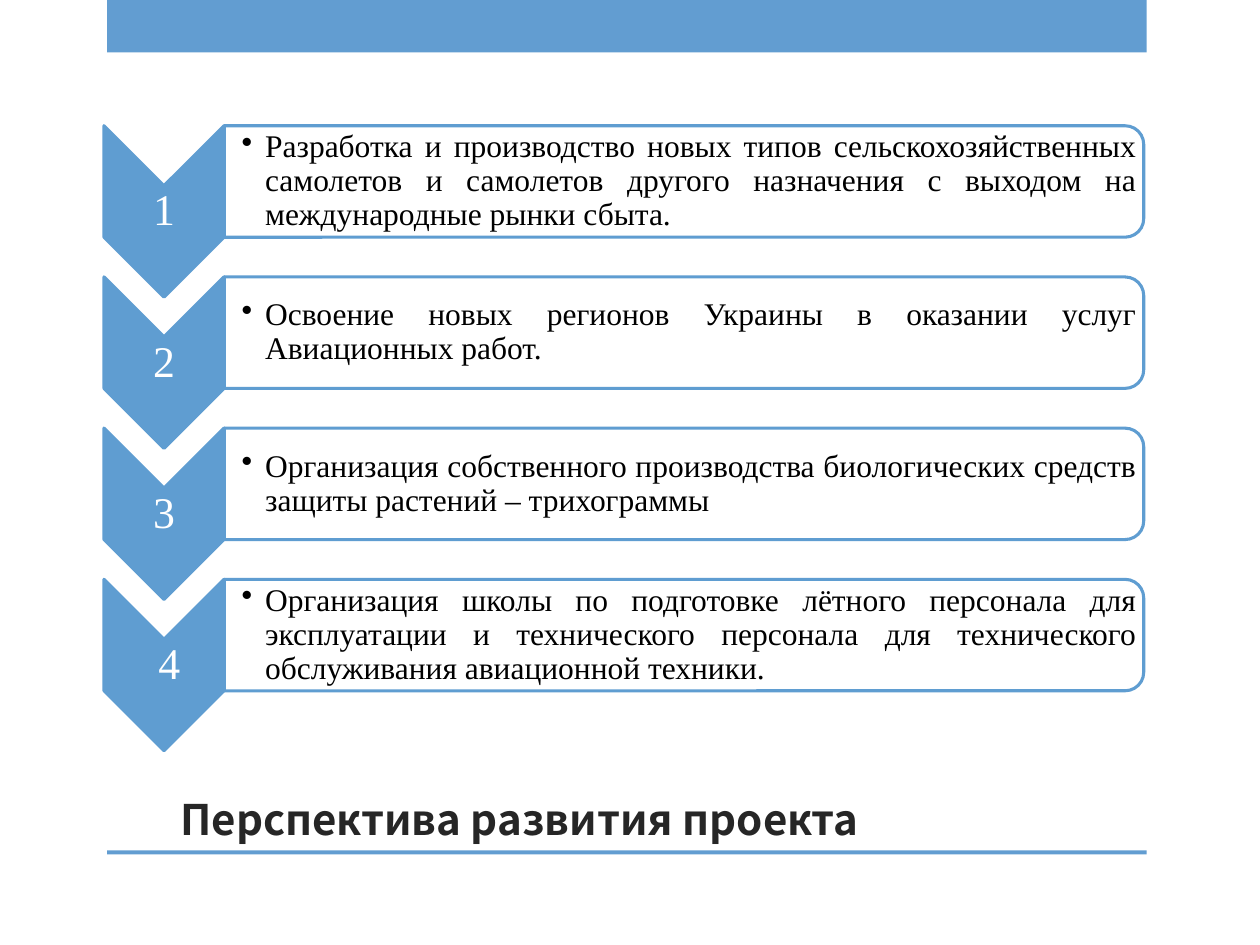
import pptx
import pptx.util
import pptx.dml.color
import pptx.enum.shapes
import pptx.enum.text
import pptx.oxml
import pptx.oxml.ns
from lxml import etree

Pt = pptx.util.Pt
KIND = pptx.enum.shapes.MSO_SHAPE
ALIGN = pptx.enum.text.PP_ALIGN
ANCHOR = pptx.enum.text.MSO_ANCHOR
qn = pptx.oxml.ns.qn

# Content: number, its first-line indent, goal
TITLE = "Перспектива развития проекта"
GOALS = [
    ("1", 0, "Разработка и производство новых типов сельскохозяйственных самолетов "
             "и самолетов другого назначения с выходом на международные рынки сбыта."),
    ("2", 0, "Освоение новых регионов Украины в оказании услуг Авиационных работ."),
    ("3", 0, "Организация собственного производства биологических средств "
             "защиты растений – трихограммы"),
    ("4", 6.25, "Организация школы по подготовке лётного персонала для эксплуатации "
                "и технического персонала для технического обслуживания авиационной техники."),
]
BLUE, BAR = "5F9DD1", "629DD1"
SERIF, SANS = "Times New Roman", "Noto Sans CJK KR"
STEP = 86.4


def color(code):
    return pptx.dml.color.RGBColor.from_string(code)


def write(shape, text, font=SERIF, size=18, ink="000000", bold=False, align=ALIGN.LEFT,
          anchor=ANCHOR.MIDDLE, inset=(0, 0, 0, 0), left=0, first=0,
          bullet=None, level=0, space=None):
    frame = shape.text_frame
    frame.word_wrap = True
    frame.auto_size = pptx.enum.text.MSO_AUTO_SIZE.NONE
    frame.vertical_anchor = anchor
    (frame.margin_left, frame.margin_top,
     frame.margin_right, frame.margin_bottom) = map(Pt, inset)
    para = frame.paragraphs[0]
    para.text = text
    para.alignment, para.level = align, level
    props = para._p.get_or_add_pPr()
    props.set("marL", str(Pt(left)))
    props.set("indent", str(Pt(first)))
    if bullet:
        tint = etree.SubElement(props, qn("a:buClr"))
        etree.SubElement(tint, qn("a:srgbClr"), val=ink)
        etree.SubElement(props, qn("a:buChar"), char=bullet)
    if space:
        para.line_spacing = space
    run = para.runs[0].font
    run.name, run.size, run.bold = font, Pt(size), bold
    run.color.rgb = color(ink)


def place(shape, box):
    shape.left, shape.top, shape.width, shape.height = map(Pt, box)


def draw(slide, kind, box, fill, line=None, adjust=(), turn=0, alpha=None):
    shape = slide.shapes.add_shape(kind, *map(Pt, box))
    shape.shadow.inherit = False
    shape.rotation = turn
    for i, val in enumerate(adjust):
        shape.adjustments[i] = val
    shape.fill.solid()
    shape.fill.fore_color.rgb = color(fill)
    if alpha:
        tint = shape._element.spPr.find(qn("a:solidFill"))[0]
        etree.SubElement(tint, qn("a:alpha"), val=str(alpha * 1000))
    if line:
        shape.line.color.rgb = color(line)
        shape.line.width = Pt(1.75)
    else:
        shape.line.fill.background()


def label(slide, box, text, **style):
    write(slide.shapes.add_textbox(*map(Pt, box)), text, **style)


def main():
    deck = pptx.Presentation()
    deck.slide_width, deck.slide_height = Pt(720), Pt(540)
    slide = deck.slides.add_slide(deck.slide_layouts[5])

    # Top band and rule under the title
    for top, high in ((0, 30), (486, 2.2)):
        draw(slide, KIND.RECTANGLE, (61.2, top, 594, high), BAR)

    # Title
    head = slide.shapes.title
    place(head, (59.8, 360, 606.2, 126))
    write(head, TITLE, font=SANS, size=24, ink="262626", bold=True,
          anchor=ANCHOR.BOTTOM, inset=(7.2, 3.6, 7.2, 3.6), first=36)

    # Numbered goals, one row per step
    for i, (num, shift, goal) in enumerate(GOALS):
        y = i * STEP
        draw(slide, KIND.CHEVRON, (44.7, 86.5 + y, 98, 68.6), BLUE, BLUE,
             adjust=(0.5,), turn=90)
        label(slide, (59.4, 106.3 + y, 68.6, 29.4), num, size=25, ink="FFFFFF",
              align=ALIGN.CENTER, inset=(1.25,) * 4, first=shift, space=0.9)
        draw(slide, KIND.ROUND_2_SAME_RECTANGLE, (359, -159 + y, 63.7, 525.4), "FFFFFF", BLUE,
             adjust=(0.167, 0), turn=90, alpha=90)
        label(slide, (128, 75 + y, 522.4, 57.5), goal, align=ALIGN.JUSTIFY,
              inset=(10, 0.9, 0.9, 0.9), left=13.5, first=-13.5,
              bullet="•", level=1, space=0.9)

    deck.save("out.pptx")


if __name__ == "__main__":
    main()
